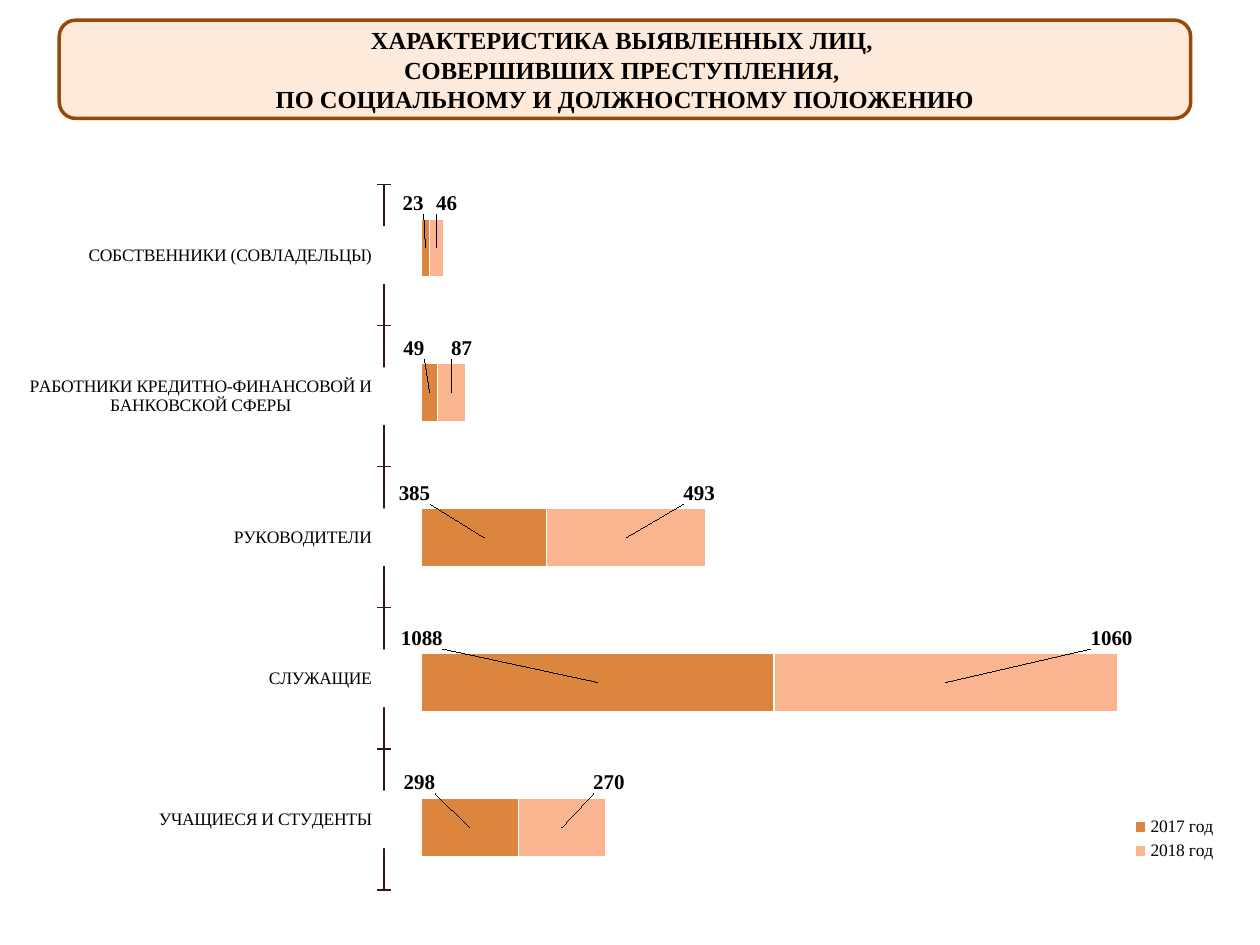
from lxml import etree
from pptx import Presentation
from pptx.chart.data import CategoryChartData
from pptx.dml.color import RGBColor
from pptx.enum.chart import XL_CHART_TYPE, XL_LEGEND_POSITION, XL_TICK_LABEL_POSITION, XL_TICK_MARK
from pptx.enum.shapes import MSO_SHAPE
from pptx.enum.text import MSO_ANCHOR, PP_ALIGN
from pptx.oxml.ns import qn
from pptx.util import Inches, Pt

BAR_STACKED = XL_CHART_TYPE.BAR_STACKED
LEGEND_RIGHT = XL_LEGEND_POSITION.RIGHT
LABELS_LOW = XL_TICK_LABEL_POSITION.LOW
TICK_CROSS, TICK_NONE = XL_TICK_MARK.CROSS, XL_TICK_MARK.NONE
CENTER, MIDDLE = PP_ALIGN.CENTER, MSO_ANCHOR.MIDDLE
ROUNDED = MSO_SHAPE.ROUNDED_RECTANGLE

BLACK = RGBColor(0x00, 0x00, 0x00)
WHITE = RGBColor(0xFF, 0xFF, 0xFF)
CREAM = RGBColor(0xFD, 0xEA, 0xDA)
BROWN = RGBColor(0x98, 0x48, 0x07)
AXIS_COLOR = RGBColor(0x38, 0x15, 0x14)
ORANGE = RGBColor(0xDC, 0x85, 0x3E)
PEACH = RGBColor(0xFA, 0xB4, 0x90)
FONT = "Times New Roman"


def style_font(font, size=10, bold=False):
    font.name, font.size, font.bold = FONT, Pt(size), bold
    font.color.rgb = BLACK


def place(parent, index, **settings):
    """Give a chart part a manual layout, as fractions of the chart."""
    for old in parent.findall(qn("c:layout")):
        parent.remove(old)
    layout = etree.Element(qn("c:layout"))
    manual = etree.SubElement(layout, qn("c:manualLayout"))
    for name, value in settings.items():
        etree.SubElement(manual, qn("c:" + name)).set("val", str(value))
    parent.insert(index, layout)


deck = Presentation()
deck.slide_width, deck.slide_height = Inches(10), Inches(7.5)
page = deck.slides.add_slide(deck.slide_layouts[6])

# Title box
box = page.shapes.add_shape(ROUNDED, Inches(0.47), Inches(0.16), Inches(8.98), Inches(0.78))
box.shadow.inherit = False
box.fill.solid()
box.fill.fore_color.rgb = CREAM
box.line.color.rgb = BROWN
box.line.width = Pt(2)
frame = box.text_frame
frame.word_wrap = True
frame.vertical_anchor = MIDDLE
title_lines = [
    "ХАРАКТЕРИСТИКА ВЫЯВЛЕННЫХ ЛИЦ, ",
    "СОВЕРШИВШИХ ПРЕСТУПЛЕНИЯ, ",
    "ПО СОЦИАЛЬНОМУ И ДОЛЖНОСТНОМУ ПОЛОЖЕНИЮ",
]
for number, line in enumerate(title_lines):
    para = frame.add_paragraph() if number else frame.paragraphs[0]
    para.alignment = CENTER
    span = para.add_run()
    span.text = line
    style_font(span.font, size=14, bold=True)

# Both charts: the bars, and the axis with the category names
bar_values = {
    "2017 год": [298, 1088, 385, 49, 23],
    "2018 год": [270, 1060, 493, 87, 46],
}
groups = [
    "УЧАЩИЕСЯ И СТУДЕНТЫ",
    "СЛУЖАЩИЕ",
    "РУКОВОДИТЕЛИ",
    "РАБОТНИКИ КРЕДИТНО-ФИНАНСОВОЙ И БАНКОВСКОЙ СФЕРЫ",
    "СОБСТВЕННИКИ (СОВЛАДЕЛЬЦЫ)",
]
axis_values = {"Series 1": [0] * 5, "Series 2": [0] * 5}
chart_specs = [
    (["1", "2", "3", "4", "5"], bar_values, (1.22, 1.31, 8.9, 5.91), (0.239, 0.014, 0.722, 0.973)),
    (groups, axis_values, (0.23, 1.33, 6.36, 5.87), (0.443, 0.023, 0.074, 0.954)),
]
charts = []
for categories, values, position, (left, top, width, height) in chart_specs:
    data = CategoryChartData()
    data.categories = categories
    for name, numbers in values.items():
        data.add_series(name, numbers)
    chart = page.shapes.add_chart(BAR_STACKED, *map(Inches, position), data).chart
    chart.has_title = False
    chart.has_legend = False
    style_font(chart.font)
    place(chart.plots[0]._element.getparent(), 0, layoutTarget="inner", xMode="edge",
          yMode="edge", x=left, y=top, w=width, h=height)
    chart.value_axis.has_major_gridlines = False
    chart.value_axis.minimum_scale = 0
    chart.value_axis.maximum_scale = 2500
    chart.value_axis.visible = False
    plot = chart.plots[0]
    plot.gap_width, plot.overlap = 150, 100
    plot.vary_by_categories = False
    for series, color in zip(plot.series, (ORANGE, PEACH)):
        series.format.fill.solid()
        series.format.fill.fore_color.rgb = color
        series.format.line.color.rgb = WHITE
        series.format.line.width = Pt(0.75)
    charts.append(chart)
bar_chart, axis_chart = charts

# Value labels: label centres in inches, shifted from the middle of each bar part
bar_chart.category_axis.visible = False
label_centers = [(3.33, 3.35, 3.29, 3.29, 3.28), (4.84, 8.83, 5.55, 3.67, 3.55)]
bar_left, inches_per_unit, chart_width = 3.35, 6.43 / 2500, 8.9
starts = [0] * 5
for series, centers in zip(bar_chart.plots[0].series, label_centers):
    labels = series.data_labels
    labels.show_value = True
    style_font(labels.font, size=12, bold=True)
    for index, (value, center) in enumerate(zip(series.values, centers)):
        style_font(series.points[index].data_label.font, size=12, bold=True)
        middle = bar_left + (starts[index] + value / 2) * inches_per_unit
        place(labels._element.findall(qn("c:dLbl"))[index], 1,
              x=round((center - middle) / chart_width, 3), y=-0.06)
        starts[index] += value

# Legend
bar_chart.has_legend = True
legend = bar_chart.legend
legend.position = LEGEND_RIGHT
legend.include_in_layout = False
style_font(legend.font)
place(legend._element, 1, xMode="edge", yMode="edge", x=0.87, y=0.87, w=0.08, h=0.07)

# Category axis
axis = axis_chart.category_axis
axis.major_tick_mark, axis.minor_tick_mark = TICK_CROSS, TICK_NONE
axis.tick_label_position = LABELS_LOW
axis.format.line.color.rgb = AXIS_COLOR
axis.format.line.width = Pt(0.75)
style_font(axis.tick_labels.font)

deck.save("out.pptx")
